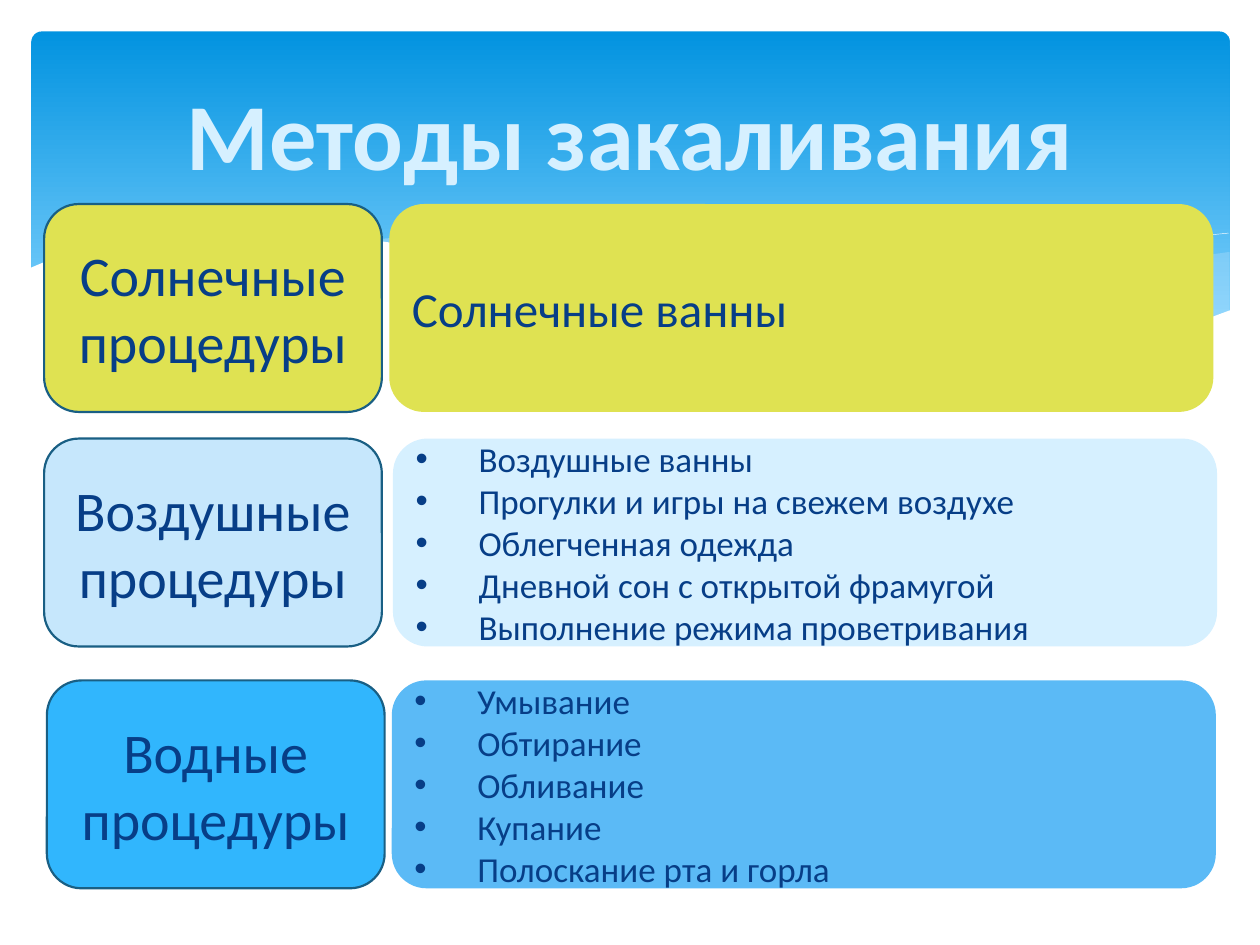
from lxml.etree import SubElement
from pptx import Presentation
from pptx.dml.color import RGBColor
from pptx.enum.shapes import MSO_SHAPE
from pptx.enum.text import MSO_ANCHOR, MSO_AUTO_SIZE, PP_ALIGN
from pptx.oxml.ns import qn
from pptx.util import Pt

WHITE = RGBColor(0xFF, 0xFF, 0xFF)
NAVY = RGBColor(0x07, 0x3E, 0x87)
OUTLINE = RGBColor(0x19, 0x5F, 0x84)
LIME = RGBColor(0xDF, 0xE2, 0x52)
PALE = RGBColor(0xC6, 0xE7, 0xFC)
ICE = RGBColor(0xD6, 0xF0, 0xFF)
AZURE = RGBColor(0x31, 0xB6, 0xFD)
SKY = RGBColor(0x5B, 0xBA, 0xF6)
BANNER_TOP = RGBColor(0x02, 0x93, 0xE0)
BANNER_BOTTOM = RGBColor(0x83, 0xD3, 0xFE)

TITLE = "Методы закаливания"
METHODS = [
    dict(name="Солнечные процедуры", name_fill=LIME, detail_fill=LIME,
         name_left=25.2, detail_left=222.5, top=116.6, size=28,
         details=["Солнечные ванны"]),
    dict(name="Воздушные процедуры", name_fill=PALE, detail_fill=ICE,
         name_left=25.2, detail_left=224.6, top=250.6, size=20,
         details=["Воздушные ванны", "Прогулки и игры на свежем воздухе",
                  "Облегченная одежда", "Дневной сон с открытой фрамугой",
                  "Выполнение режима проветривания"]),
    dict(name="Водные процедуры", name_fill=AZURE, detail_fill=SKY,
         name_left=26.8, detail_left=223.9, top=388.8, size=20,
         details=["Умывание", "Обтирание", "Обливание", "Купание",
                  "Полоскание рта и горла"]),
]
NAME_WIDTH, DETAIL_WIDTH, ROW_HEIGHT = 193, 470.9, 118.8
BULLET_INDENT = 36

RIGHT_WAVE = [
    (702, 144), (682.6, 146.9), (662.4, 151), (641.5, 155.5), (619.9, 160.6),
    (579.6, 170.6), (542.2, 178.6), (508.3, 185), (475.9, 190.8), (507.6, 195.1),
    (545, 198.7), (578.2, 200.2), (614.9, 199.4), (645.8, 194.4), (673.2, 188.6),
    (702.7, 177.8), (702.7, 144)]
MIDDLE_WAVE = [
    (643, 196.6), (602.6, 190.8), (558, 182.9), (508.3, 172.8), (452.9, 159.8),
    (409.7, 149.8), (370.1, 142.6), (334.8, 137.5), (287.3, 133.9), (247.7, 133.9),
    (205.9, 137.5), (246.2, 143.3), (290.9, 151.9), (323.3, 159.8), (381.6, 172.8),
    (432.7, 183.6), (478.8, 191.5), (520, 197), (556.6, 199.4), (596.2, 200.2),
    (630.7, 198)]
LONG_CURVE = [
    (222.5, 140.4), (247.7, 136.8), (278.6, 134.6), (324, 135.4), (367.2, 138.2),
    (419, 144), (478.8, 153.4), (547.2, 167.8), (598.3, 180.7), (653, 195.8)]
SHORT_CURVE = [
    (441.4, 185), (500.4, 169.2), (558.7, 155.5), (623.5, 143.3), (665.3, 136.8),
    (702, 133.2)]
WHITE_WAVE = [
    (703.4, 177.1), (684, 184.3), (655.2, 192.2), (621.4, 197.3), (582.5, 199.4),
    (535.7, 197.3), (481, 190.8), (416.9, 180), (362.2, 167.8), (321.8, 158.4),
    (281.5, 149), (244.8, 141.8), (210.2, 136.8), (180, 133.9), (151.9, 132.5),
    (127.4, 132.5), (105.1, 133.2), (85.7, 134.6), (61.2, 139), (37.4, 144.7),
    (16.6, 153.4), (16.6, 236.9), (703.4, 236.9)]
WAVES = [
    dict(points=RIGHT_WAVE, fill=PALE, opacity=29),
    dict(points=MIDDLE_WAVE, fill=PALE, opacity=40),
    dict(points=LONG_CURVE, line=WHITE, line_width=0.25),
    dict(points=SHORT_CURVE, line=WHITE, line_width=0.25),
    dict(points=WHITE_WAVE, fill=WHITE),
]


def paint(shape, fill=None, line=None, line_width=1.25, opacity=100):
    shape.shadow.inherit = False
    if fill is None:
        shape.fill.background()
    else:
        shape.fill.solid()
        shape.fill.fore_color.rgb = fill
        if opacity < 100:
            color = shape.fill._xPr.find(".//" + qn("a:srgbClr"))
            SubElement(color, qn("a:alpha"), val=str(opacity * 1000))
    if line is None:
        shape.line.fill.background()
    else:
        shape.line.color.rgb = line
        shape.line.width = Pt(line_width)


def write(shape, lines, align, bulleted=False, **font_format):
    frame = shape.text_frame
    frame.text = "\n".join(lines)
    for key, value in dict(word_wrap=True, auto_size=MSO_AUTO_SIZE.NONE,
                           vertical_anchor=MSO_ANCHOR.MIDDLE).items():
        setattr(frame, key, value)
    for paragraph in frame.paragraphs:
        paragraph.alignment = align
        for key, value in dict(name="Calibri", **font_format).items():
            setattr(paragraph.runs[0].font, key, value)
        paragraph.runs[0].font.color.rgb = ICE if shape.is_placeholder else NAVY
        if bulleted:
            properties = paragraph._p.get_or_add_pPr()
            properties.set("marL", str(Pt(BULLET_INDENT)))
            properties.set("indent", str(-Pt(BULLET_INDENT)))
            SubElement(properties, qn("a:buFont"), typeface="Arial")
            SubElement(properties, qn("a:buChar"), char="•")


def add_box(slide, preset, left, top, width, height=ROW_HEIGHT):
    return slide.shapes.add_shape(preset, Pt(left), Pt(top), Pt(width), Pt(height))


def add_banner(slide):
    banner = add_box(slide, MSO_SHAPE.ROUNDED_RECTANGLE, 18, 18, 684.7, 194.4)
    banner.adjustments[0] = 0.03
    paint(banner)
    banner.fill.gradient()
    banner.fill.gradient_angle = 270
    for stop, color, position in zip(banner.fill.gradient_stops,
                                     (BANNER_TOP, BANNER_BOTTOM), (0, 0.9)):
        stop.color.rgb = color
        stop.position = position


def add_wave(slide, points, **look):
    start, *rest = [(Pt(x), Pt(y)) for x, y in points]
    builder = slide.shapes.build_freeform(*start)
    builder.add_line_segments(rest, close="fill" in look)
    paint(builder.convert_to_shape(), **look)


def add_title(slide):
    title = slide.shapes.title
    title.element.getparent().append(title.element)
    for key, value in dict(left=36, top=26.6, width=648, height=98.6).items():
        setattr(title, key, Pt(value))
    write(title, [TITLE], PP_ALIGN.CENTER, size=Pt(54), bold=True)


def add_method(slide, method):
    name = add_box(slide, MSO_SHAPE.FLOWCHART_ALTERNATE_PROCESS,
                   method["name_left"], method["top"], NAME_WIDTH)
    paint(name, method["name_fill"], OUTLINE)
    write(name, [method["name"]], PP_ALIGN.CENTER, size=Pt(32))
    detail = add_box(slide, MSO_SHAPE.ROUNDED_RECTANGLE,
                     method["detail_left"], method["top"], DETAIL_WIDTH)
    paint(detail, method["detail_fill"])
    write(detail, method["details"], PP_ALIGN.LEFT,
          bulleted=len(method["details"]) > 1, size=Pt(method["size"]))


def main():
    deck = Presentation()
    deck.slide_width, deck.slide_height = Pt(720), Pt(540)
    slide = deck.slides.add_slide(deck.slide_layouts[5])
    add_banner(slide)
    for wave in WAVES:
        add_wave(slide, **wave)
    add_title(slide)
    for method in METHODS:
        add_method(slide, method)
    deck.save("out.pptx")


if __name__ == "__main__":
    main()
